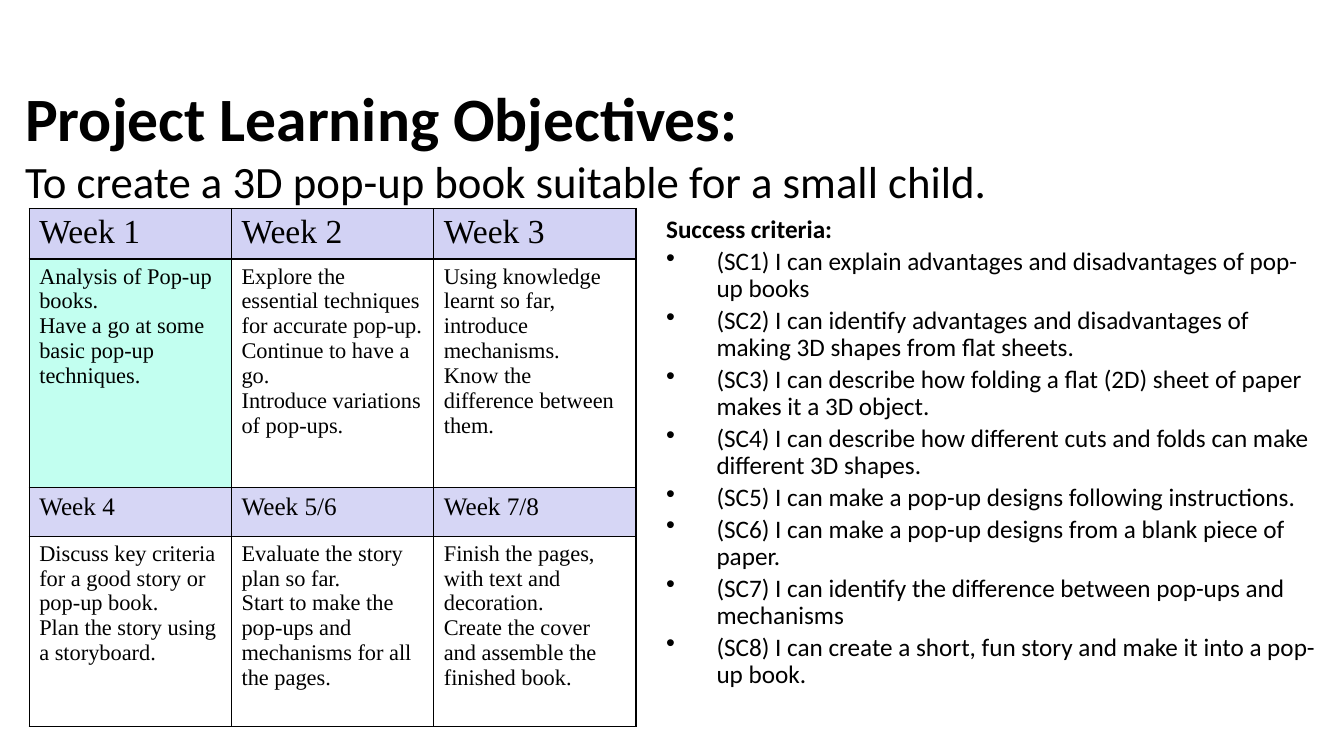
from dataclasses import dataclass

from lxml.etree import SubElement
from pptx import Presentation
from pptx.dml.color import RGBColor
from pptx.enum.text import MSO_ANCHOR, MSO_AUTO_SIZE
from pptx.oxml import parse_xml
from pptx.oxml.ns import nsdecls, qn
from pptx.util import Pt


@dataclass(frozen=True)
class Theme:
    sans: str = "Calibri"
    serif: str = "Times New Roman"
    ink: str = "000000"
    first_header: str = "D2D2F4"
    second_header: str = "D6D6F5"
    current_week: str = "C2FFF0"
    title: int = 44
    subtitle: int = 32
    week: int = 24
    body: int = 18
    task: int = 16


theme = Theme()


def write(para, text, *, size, font=theme.sans, bold=False):
    span = para.add_run()
    span.text = text
    span.font.name = font
    span.font.size = Pt(size)
    span.font.bold = bold
    span.font.color.rgb = RGBColor.from_string(theme.ink)


def outline(cell):
    """Draw a one-point line on all four sides of a table cell."""
    properties = cell._tc.get_or_add_tcPr()
    for position, side in enumerate(("lnL", "lnR", "lnT", "lnB")):
        properties.insert(position, parse_xml(
            f'<a:{side} {nsdecls("a")} w="{Pt(1)}"><a:solidFill>'
            f'<a:srgbClr val="{theme.ink}"/></a:solidFill></a:{side}>'))


deck = Presentation()
deck.slide_width, deck.slide_height = Pt(960), Pt(540)
page = deck.slides.add_slide(deck.slide_layouts[6])

# Title
title = page.shapes.add_textbox(Pt(10.8), Pt(49), Pt(901.5), Pt(107.3)).text_frame
title.word_wrap = True
title.vertical_anchor = MSO_ANCHOR.MIDDLE
para = title.paragraphs[0]
write(para, "Project Learning Objectives: ", size=theme.title, bold=True)
para.add_line_break()
write(para, "To create a 3D pop-up book suitable for a small child.", size=theme.subtitle)

# Success criteria
criteria = [
    "I can explain advantages and disadvantages of pop-up books",
    "I can identify advantages and disadvantages of making 3D shapes from flat sheets.",
    "I can describe how folding a flat (2D) sheet of paper makes it a 3D object.",
    "I can describe how different cuts and folds can make different 3D shapes.",
    "I can make a pop-up designs following instructions.",
    "I can make a pop-up designs from a blank piece of paper.",
    "I can identify the difference between pop-ups and mechanisms",
    "I can create a short, fun story and make it into a pop-up book.",
]
success = page.shapes.add_textbox(Pt(468.7), Pt(149), Pt(481.7), Pt(370)).text_frame
success.word_wrap = True
success.auto_size = MSO_AUTO_SIZE.TEXT_TO_FIT_SHAPE
write(success.paragraphs[0], "Success criteria:", size=theme.body, bold=True)
for number, criterion in enumerate(criteria, 1):
    para = success.add_paragraph()
    para.space_before = Pt(3.6)
    properties = para._p.get_or_add_pPr()
    properties.set("marL", str(Pt(36)))
    properties.set("indent", str(-Pt(36)))
    SubElement(properties, qn("a:buFont"), typeface="Arial")
    SubElement(properties, qn("a:buChar"), char="•")
    write(para, f"(SC{number}) {criterion}", size=theme.body)

# Weekly plan: each row has its height, type size, fills and cell texts
plan = [
    (34.5, theme.week, [theme.first_header] * 3, ["Week 1", "Week 2", "Week 3"]),
    (163.5, theme.task, [theme.current_week, None, None], [
        "Analysis of Pop-up books.\nHave a go at some basic pop-up techniques.",
        "Explore the essential techniques for accurate pop-up.\n"
        "Continue to have a go.\nIntroduce variations of pop-ups.",
        "Using knowledge learnt so far, introduce mechanisms.\n"
        "Know the difference between them.",
    ]),
    (34.5, theme.body, [theme.second_header] * 3, ["Week 4", "Week 5/6", "Week 7/8"]),
    (136, theme.task, [None] * 3, [
        "Discuss key criteria for a good story or pop-up book.\n"
        "Plan the story using a storyboard.",
        "Evaluate the story plan so far.\n"
        "Start to make the pop-ups and mechanisms for all the pages.",
        "Finish the pages, with text and decoration.\n"
        "Create the cover and assemble the finished book.",
    ]),
]
table = page.shapes.add_table(len(plan), 3, Pt(20.9), Pt(149), Pt(433.5), Pt(368.5)).table
table.first_row = table.horz_banding = False
for row, (height, size, fills, texts) in zip(table.rows, plan):
    row.height = Pt(height)
    for cell, fill, text in zip(row.cells, fills, texts):
        if fill:
            cell.fill.solid()
            cell.fill.fore_color.rgb = RGBColor.from_string(fill)
        else:
            cell.fill.background()
        outline(cell)
        for index, line in enumerate(text.split("\n")):
            frame = cell.text_frame
            para = frame.add_paragraph() if index else frame.paragraphs[0]
            write(para, line, size=size, font=theme.serif)

deck.save("out.pptx")
